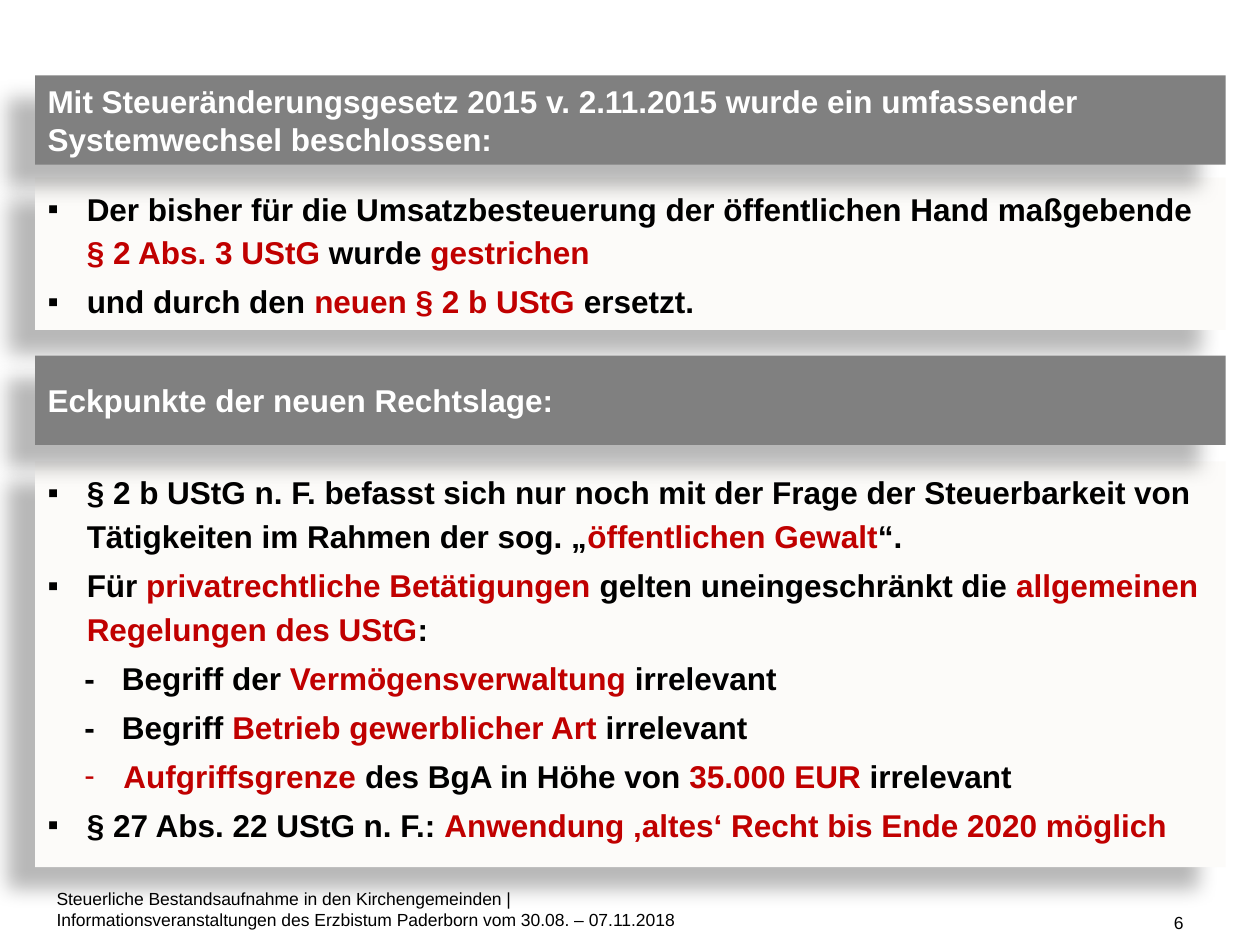
from lxml.etree import SubElement
from pptx import Presentation
from pptx.dml.color import RGBColor
from pptx.enum.shapes import MSO_SHAPE
from pptx.enum.text import MSO_ANCHOR, PP_ALIGN
from pptx.oxml.ns import qn
from pptx.util import Cm, Pt

BLACK, RED, WHITE = "000000", "C00000", "FFFFFF"
GREY, CREAM = "808080", "FCFBF9"
LEFT, WIDTH = 0.71, 24.0
TAB = 1.5


def color(code):
    return RGBColor.from_string(code)


def node(parent, tag, **attrs):
    return SubElement(parent, qn(tag), {k: str(v) for k, v in attrs.items()})


class Deck:
    font = "Arial"

    def __init__(self):
        self.prs = Presentation()
        self.prs.slide_width, self.prs.slide_height = Cm(25.4), Cm(19.05)
        self.slide = self.prs.slides.add_slide(self.prs.slide_layouts[6])
        fill = self.slide.background.fill
        fill.solid()
        fill.fore_color.rgb = color(WHITE)

    def run(self, para, text, size, code, bold=False):
        """Add a run; each newline becomes a line break."""
        for i, line in enumerate(text.split("\n")):
            if i:
                para.add_line_break()
            if line:
                run = para.add_run()
                run.text = line
                font = run.font
                font.name, font.size, font.bold = self.font, Pt(size), bold
                font.color.rgb = color(code)

    def panel(self, top, height, fill, anchor):
        """Add a full-width box with a soft shadow; return its text frame."""
        box = self.slide.shapes.add_shape(
            MSO_SHAPE.RECTANGLE, Cm(LEFT), Cm(top), Cm(WIDTH), Cm(height))
        box.fill.solid()
        box.fill.fore_color.rgb = color(fill)
        box.line.fill.background()
        box.shadow.inherit = False
        effects = box._element.spPr.find(qn("a:effectLst"))
        shade = node(effects, "a:outerShdw", blurRad=Pt(11.8), dist=Pt(19.7),
                     dir=141 * 60000, algn="ctr", rotWithShape=0)
        node(node(shade, "a:srgbClr", val=BLACK), "a:alpha", val=28000)
        frame = box.text_frame
        frame.word_wrap = True
        frame.vertical_anchor = anchor
        return frame

    def head(self, top, text):
        para = self.panel(top, 1.8, GREY, MSO_ANCHOR.MIDDLE).paragraphs[0]
        para.alignment = PP_ALIGN.LEFT
        para.space_after = Pt(12)
        self.run(para, text, 18, WHITE, True)

    def list(self, top, height, items):
        """Add items of (bullet, indent, hang, runs); runs alternate black and red."""
        frame = self.panel(top, height, CREAM, MSO_ANCHOR.TOP)
        for i, (mark, indent, hang, runs) in enumerate(items):
            para = frame.add_paragraph() if i else frame.paragraphs[0]
            props = para._p.get_or_add_pPr()
            props.set("marL", str(Cm(indent)))
            props.set("indent", str(-Cm(hang)))
            if mark:
                node(props, "a:buFont", typeface=self.font)
                node(props, "a:buChar", char=mark)
            else:
                node(props, "a:buNone")
            node(node(props, "a:tabLst"), "a:tab", pos=Cm(TAB), algn="l")
            para.alignment = PP_ALIGN.LEFT
            para.line_spacing, para.space_after = Pt(25), Pt(3)
            for j, text in enumerate(runs):
                self.run(para, text, 18, RED if j % 2 else BLACK, True)

    def note(self, left, top, width, text, align):
        box = self.slide.shapes.add_textbox(Cm(left), Cm(top), Cm(width), Cm(1.02))
        frame = box.text_frame
        frame.word_wrap = True
        frame.vertical_anchor = MSO_ANCHOR.BOTTOM
        para = frame.paragraphs[0]
        para.alignment = align
        self.run(para, text, 10, BLACK)


def point(*runs):
    return "▪", 0.79, 0.79, runs


def dash(*runs):
    return None, TAB, 0.76, runs


def main():
    deck = Deck()
    deck.note(0.89, 17.86, 15.82,
              "Steuerliche Bestandsaufnahme in den Kirchengemeinden | \n"
              "Informationsveranstaltungen des Erzbistum Paderborn "
              "vom 30.08. – 07.11.2018", PP_ALIGN.LEFT)
    deck.note(18.19, 17.91, 5.92, "6", PP_ALIGN.RIGHT)
    deck.list(3.58, 3.07, [
        point("Der bisher für die Umsatzbesteuerung der öffentlichen Hand "
              "maßgebende \n", "§ 2 Abs. 3 UStG ", "wurde ", "gestrichen"),
        point("und durch den ", "neuen § 2 b UStG ", "ersetzt."),
    ])
    deck.head(1.52, "Mit Steueränderungsgesetz 2015 v. 2.11.2015 wurde ein "
                    "umfassender Systemwechsel beschlossen:")
    deck.list(9.3, 8.18, [
        point("§ 2 b UStG n. F. befasst sich nur noch mit der Frage der "
              "Steuerbarkeit von Tätigkeiten im Rahmen der sog. „",
              "öffentlichen Gewalt", "“."),
        point("Für ", "privatrechtliche Betätigungen ",
              "gelten uneingeschränkt die ",
              "allgemeinen Regelungen des UStG", ":"),
        dash("-\tBegriff der ", "Vermögensverwaltung", " irrelevant"),
        dash("-\tBegriff ", "Betrieb gewerblicher Art ", "irrelevant"),
        ("-", 1.53, 0.79, ("", "Aufgriffsgrenze ", "des BgA in Höhe von ",
                           "35.000 EUR ", "irrelevant")),
        point("§ 27 Abs. 22 UStG n. F.: ",
              "Anwendung ‚altes‘ Recht bis Ende 2020 möglich"),
    ])
    deck.head(7.17, "Eckpunkte der neuen Rechtslage:")
    deck.prs.save("out.pptx")


if __name__ == "__main__":
    main()
